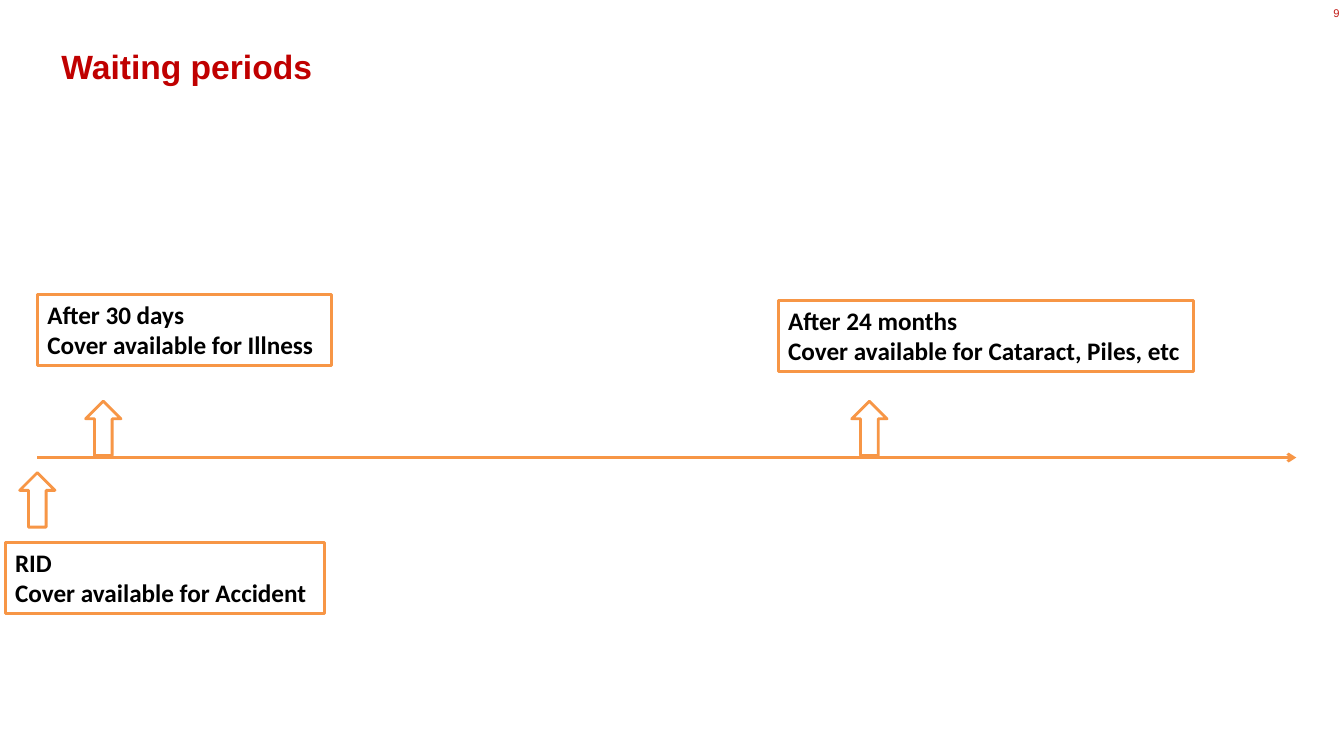
from lxml import etree
from pptx import Presentation
from pptx.dml.color import RGBColor
from pptx.enum.shapes import MSO_CONNECTOR, MSO_SHAPE
from pptx.enum.text import MSO_ANCHOR, MSO_AUTO_SIZE, PP_ALIGN
from pptx.oxml.ns import qn
from pptx.util import Inches, Pt

STRAIGHT = MSO_CONNECTOR.STRAIGHT
RECTANGLE, UP_ARROW = MSO_SHAPE.RECTANGLE, MSO_SHAPE.UP_ARROW
TOP, MIDDLE = MSO_ANCHOR.TOP, MSO_ANCHOR.MIDDLE
LEFT, RIGHT = PP_ALIGN.LEFT, PP_ALIGN.RIGHT
GROW = MSO_AUTO_SIZE.SHAPE_TO_FIT_TEXT

COLORS = {"accent": "F79646", "paper": "FFFFFF", "text": "000000",
          "title": "C00000", "number": "C21B17"}
AXIS_ROW = 60.53
ARROW_WIDTH, ARROW_HEIGHT = 2.63, 7.2
LABEL_HEIGHT = 9.47
MILESTONES = [
    (2.78, 62.53, (0.38, 71.73, 23.78), "RID\nCover available for Accident"),
    (7.69, 53.07, (2.78, 38.93, 21.9), "After 30 days\nCover available for Illness"),
    (64.69, 53.07, (57.9, 39.73, 30.9),
     "After 24 months\nCover available for Cataract, Piles, etc"),
]


class TimelineSlide:
    """Draws a timeline on a grid of 100 columns by 100 rows."""

    def __init__(self, deck):
        self.column = deck.slide_width / 100
        self.row = deck.slide_height / 100
        self.page = deck.slides.add_slide(deck.slide_layouts[6])

    def place(self, left, top, width, height):
        return (round(left * self.column), round(top * self.row),
                round(width * self.column), round(height * self.row))

    def color(self, name):
        return RGBColor.from_string(COLORS[name])

    def stroke(self, line):
        line.color.rgb = self.color("accent")
        line.width = Pt(2)

    def fill_text(self, frame, words, size, font, color, bold=True, align=LEFT):
        frame.text = words
        for para in frame.paragraphs:
            para.alignment = align
            for span in para.runs:
                span.font.size = Pt(size)
                span.font.name = font
                span.font.bold = bold
                span.font.color.rgb = self.color(color)

    def title(self, words):
        box = self.page.shapes.add_textbox(*self.place(3.83, 5.87, 91.73, 7.07))
        frame = box.text_frame
        frame.word_wrap = True
        frame.vertical_anchor = MIDDLE
        self.fill_text(frame, words, 24, "Arial", "title")
        frame.paragraphs[0].line_spacing = Pt(22)

    def page_number(self, words):
        box = self.page.shapes.add_textbox(*self.place(97.5, 0.8, 2.18, 2.53))
        frame = box.text_frame
        frame.word_wrap = True
        frame.margin_left = frame.margin_right = 0
        frame.margin_top = frame.margin_bottom = 0
        self.fill_text(frame, words, 8, "Arial", "number", bold=False, align=RIGHT)

    def axis(self, start, end, row):
        left, top, right, bottom = self.place(start, row, end, row)
        axis = self.page.shapes.add_connector(STRAIGHT, left, top, right, bottom)
        self.stroke(axis.line)
        properties = axis._element.spPr
        etree.SubElement(properties.find(qn("a:ln")), qn("a:tailEnd"), type="arrow")
        etree.SubElement(properties, qn("a:effectLst"))

    def outlined(self, kind, left, top, width, height):
        shape = self.page.shapes.add_shape(kind, *self.place(left, top, width, height))
        shape.shadow.inherit = False
        shape.fill.solid()
        shape.fill.fore_color.rgb = self.color("paper")
        self.stroke(shape.line)
        return shape

    def arrow(self, center, top):
        self.outlined(UP_ARROW, center - ARROW_WIDTH / 2, top, ARROW_WIDTH, ARROW_HEIGHT)

    def label(self, left, top, width, words):
        frame = self.outlined(RECTANGLE, left, top, width, LABEL_HEIGHT).text_frame
        frame.word_wrap = False
        frame.auto_size = GROW
        frame.vertical_anchor = TOP
        self.fill_text(frame, words, 18, "Calibri", "text")


def main():
    deck = Presentation()
    deck.slide_width, deck.slide_height = Inches(13.33), Inches(7.5)
    slide = TimelineSlide(deck)
    slide.page_number("9")
    slide.title("Waiting periods")
    slide.axis(2.78, 96.45, AXIS_ROW)
    for center, arrow_top, label_place, words in MILESTONES:
        slide.arrow(center, arrow_top)
        slide.label(*label_place, words)
    deck.save("out.pptx")


if __name__ == "__main__":
    main()
